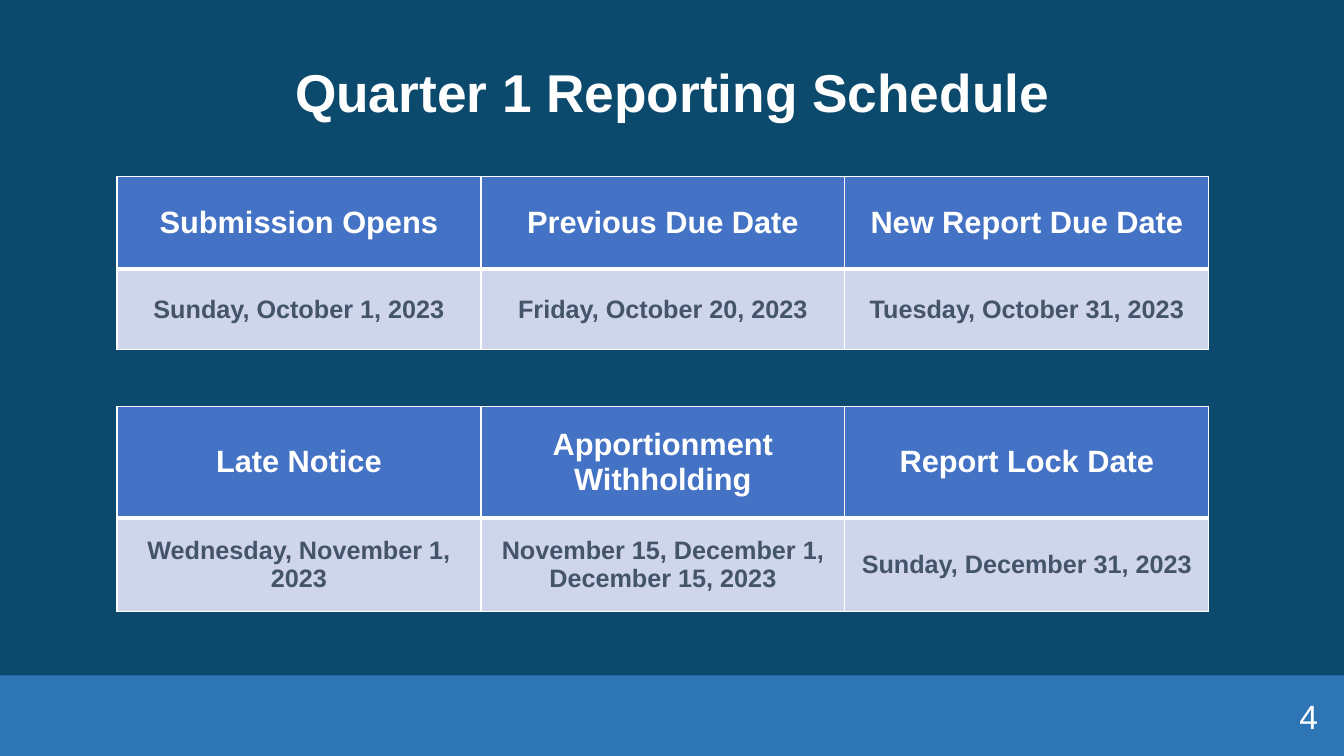
from dataclasses import dataclass

from lxml.etree import SubElement
from pptx import Presentation
from pptx.dml.color import RGBColor
from pptx.enum.shapes import MSO_SHAPE
from pptx.enum.text import MSO_ANCHOR, PP_ALIGN
from pptx.oxml.ns import qn
from pptx.util import Emu, Pt


@dataclass(frozen=True)
class Theme:
    font: str = "Arial"
    background: str = "0C4A6D"
    band: str = "2E75B6"
    header: str = "4472C4"
    body: str = "CFD5EA"
    light: str = "FFFFFF"
    dark: str = "44546A"
    title_size: int = 38
    header_size: int = 22
    body_size: int = 18
    number_size: int = 24
    thin: int = 1
    thick: int = 3


theme = Theme()
PX = 9144


def write(text_frame, text, size, color, alignment, bold=True):
    text_frame.word_wrap = True
    text_frame.vertical_anchor = MSO_ANCHOR.MIDDLE
    paragraph = text_frame.paragraphs[0]
    paragraph.alignment = alignment
    run = paragraph.add_run()
    run.text = text
    run.font.name = theme.font
    run.font.size = Pt(size)
    run.font.bold = bold
    run.font.color.rgb = RGBColor.from_string(color)
    return paragraph


def add_borders(cell, widths):
    properties = cell._tc.get_or_add_tcPr()
    for side, width in widths.items():
        line = SubElement(properties, qn(f"a:ln{side}"), w=str(Pt(width)))
        fill = SubElement(line, qn("a:solidFill"))
        SubElement(fill, qn("a:srgbClr"), val=theme.light)


presentation = Presentation()
presentation.slide_width = Emu(1333 * PX)
presentation.slide_height = Emu(750 * PX)
slide = presentation.slides.add_slide(presentation.slide_layouts[5])
slide.background.fill.solid()
slide.background.fill.fore_color.rgb = RGBColor.from_string(theme.background)

band = slide.shapes.add_shape(
    MSO_SHAPE.RECTANGLE, 0, Emu(670 * PX), presentation.slide_width, Emu(80 * PX)
)
band.shadow.inherit = False
band.fill.solid()
band.fill.fore_color.rgb = RGBColor.from_string(theme.band)
band.line.fill.background()

title = slide.shapes.title
title.left, title.top = Emu(17 * PX), Emu(22 * PX)
title.width, title.height = Emu(1300 * PX), Emu(145 * PX)
title_paragraph = write(
    title.text_frame, "Quarter 1 Reporting Schedule", theme.title_size, theme.light, PP_ALIGN.CENTER
)
title_paragraph.line_spacing = 0.9

schedules = [
    (175, (92, 80), [
        ("Submission Opens", "Previous Due Date", "New Report Due Date"),
        ("Sunday, October 1, 2023", "Friday, October 20, 2023", "Tuesday, October 31, 2023"),
    ]),
    (403, (111, 93), [
        ("Late Notice", "Apportionment Withholding", "Report Lock Date"),
        (
            "Wednesday, November 1, 2023",
            "November 15, December 1, December 15, 2023",
            "Sunday, December 31, 2023",
        ),
    ]),
]
row_styles = [
    (theme.header, theme.light, theme.header_size, theme.thin, theme.thick),
    (theme.body, theme.dark, theme.body_size, theme.thick, theme.thin),
]

for top, row_heights, rows in schedules:
    table = slide.shapes.add_table(
        2, 3, Emu(116 * PX), Emu(top * PX), Emu(1083 * PX), Emu(sum(row_heights) * PX)
    ).table
    for row_index, texts in enumerate(rows):
        table.rows[row_index].height = Emu(row_heights[row_index] * PX)
        fill, color, size, top_width, bottom_width = row_styles[row_index]
        for column_index, text in enumerate(texts):
            cell = table.cell(row_index, column_index)
            add_borders(
                cell, {"L": theme.thin, "R": theme.thin, "T": top_width, "B": bottom_width}
            )
            cell.fill.solid()
            cell.fill.fore_color.rgb = RGBColor.from_string(fill)
            cell.vertical_anchor = MSO_ANCHOR.MIDDLE
            write(cell.text_frame, text, size, color, PP_ALIGN.CENTER)

page_number = slide.shapes.add_textbox(
    Emu(1017 * PX), Emu(690 * PX), Emu(300 * PX), Emu(40 * PX)
)
write(page_number.text_frame, "4", theme.number_size, theme.light, PP_ALIGN.RIGHT, bold=False)

presentation.save("out.pptx")
